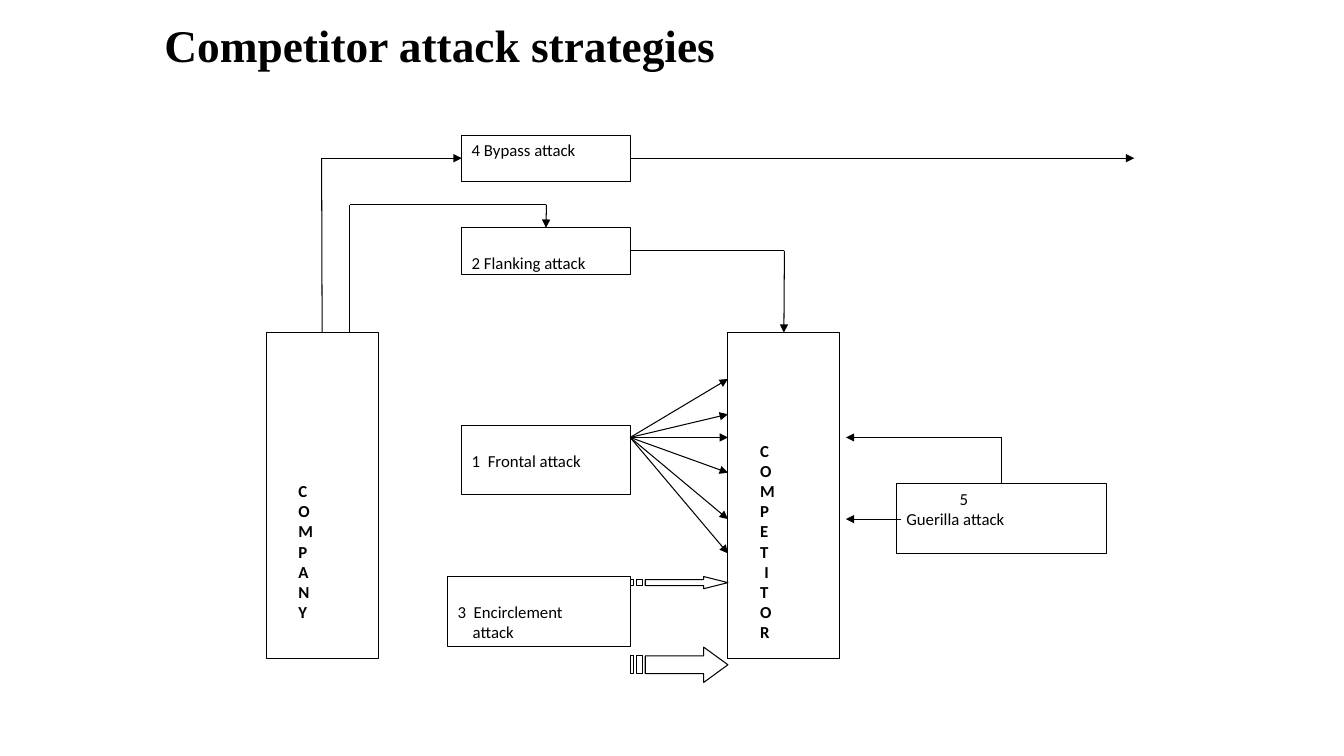
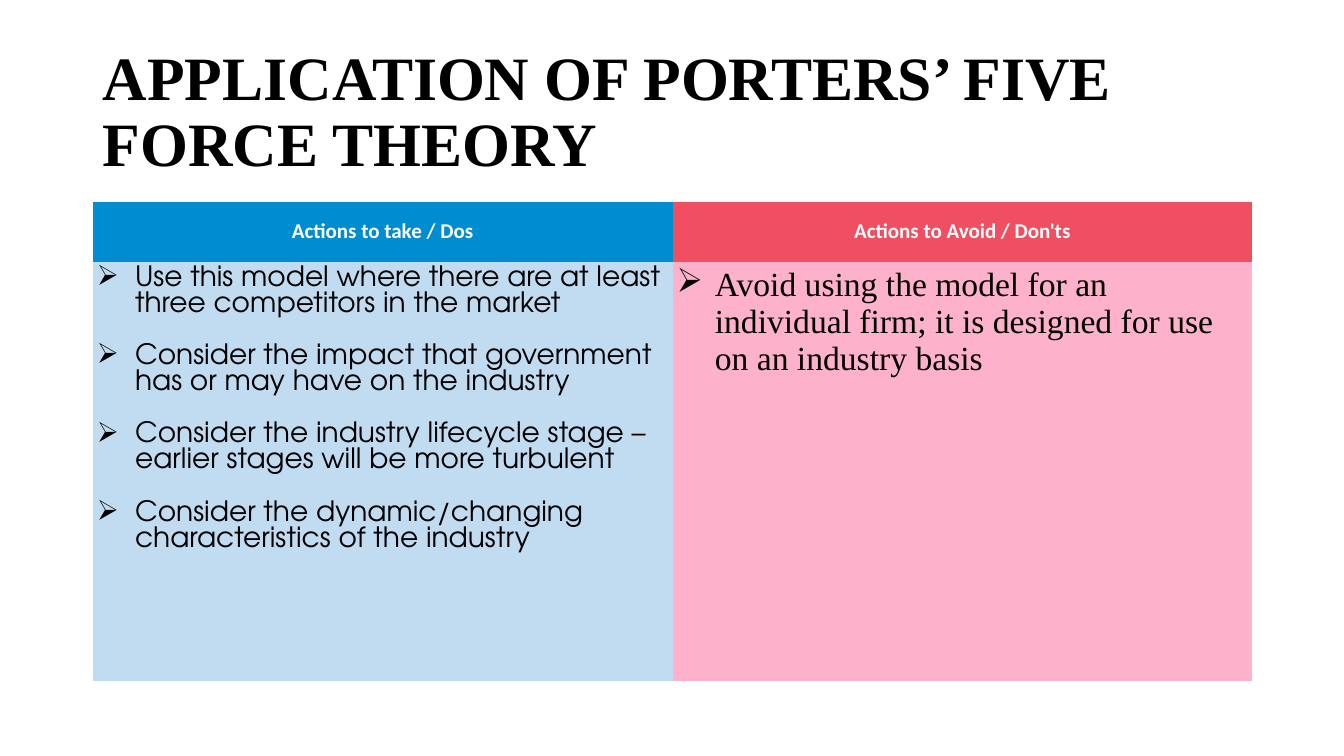
from dataclasses import dataclass

from lxml import etree
from pptx import Presentation
from pptx.dml.color import RGBColor
from pptx.enum.shapes import MSO_CONNECTOR, MSO_SHAPE
from pptx.enum.text import MSO_ANCHOR, MSO_AUTO_SIZE, PP_ALIGN
from pptx.oxml.ns import qn
from pptx.util import Inches, Pt

STRAIGHT = MSO_CONNECTOR.STRAIGHT
RECTANGLE = MSO_SHAPE.RECTANGLE
TOP, MIDDLE = MSO_ANCHOR.TOP, MSO_ANCHOR.MIDDLE
NO_AUTOFIT = MSO_AUTO_SIZE.NONE
LEFT, CENTER = PP_ALIGN.LEFT, PP_ALIGN.CENTER
SIDE_TOP, SIDE_LEFT, SIDE_RIGHT = 0, 1, 3
TITLE_ONLY = 5
PLAIN_TABLE = "{2D5ABB26-0587-4C30-8999-92F81FD0307C}"


@dataclass(frozen=True)
class Theme:
    ink: RGBColor = RGBColor(0, 0, 0)
    paper: RGBColor = RGBColor(255, 255, 255)
    do_head: RGBColor = RGBColor(0x00, 0x8D, 0xD0)
    do_body: RGBColor = RGBColor(0xC1, 0xDB, 0xF1)
    dont_head: RGBColor = RGBColor(0xF0, 0x4E, 0x61)
    dont_body: RGBColor = RGBColor(0xFD, 0xB1, 0xCB)
    serif: str = "Times New Roman"
    sans: str = "Calibri"
    geometric: str = "TeX Gyre Adventor"
    title_small: float = 32.4
    title_large: float = 44
    label: float = 12
    head: float = 15
    do_text: float = 20
    dont_text: float = 24
    hairline: float = 0.75


class Deck:
    """Holds the theme and the current slide."""

    def __init__(self, theme):
        self.theme = theme
        self.prs = Presentation()
        self.prs.slide_width, self.prs.slide_height = Inches(13.33), Inches(7.5)
        self.slide = None

    def new_slide(self):
        self.slide = self.prs.slides.add_slide(self.prs.slide_layouts[TITLE_ONLY])

    @staticmethod
    def apply(target, values):
        for name, value in values.items():
            setattr(target, name, value)

    def set_text(self, paragraph, text, font, size, color, bold=False,
                 align=LEFT, margin=0, hanging=0):
        properties = paragraph._p.get_or_add_pPr()
        properties.set("marL", str(Inches(margin)))
        properties.set("indent", str(-Inches(hanging)))
        paragraph.alignment = align
        paragraph.text = text
        for run in paragraph.runs:
            self.apply(run.font, {"name": font, "size": Pt(size), "bold": bold})
            run.font.color.rgb = color

    def title(self, text, left, top, width, height, size):
        title = self.slide.shapes.title
        self.apply(title, {"left": Inches(left), "top": Inches(top),
                           "width": Inches(width), "height": Inches(height)})
        self.apply(title.text_frame, {"vertical_anchor": MIDDLE, "word_wrap": True,
                                      "auto_size": NO_AUTOFIT})
        paragraph = title.text_frame.paragraphs[0]
        self.set_text(paragraph, text, self.theme.serif, size, self.theme.ink, bold=True)
        paragraph.line_spacing = 0.9

    def outline(self, shape):
        shape.shadow.inherit = False
        shape.fill.solid()
        shape.fill.fore_color.rgb = self.theme.paper
        shape.line.color.rgb = self.theme.ink
        shape.line.width = Pt(self.theme.hairline)

    def box(self, left, top, width, height, lines, inset_left=0.1, inset_top=0.05,
            bold=False):
        """Draw a box; each line is (text, margin, hanging)."""
        box = self.slide.shapes.add_shape(
            RECTANGLE, Inches(left), Inches(top), Inches(width), Inches(height))
        self.outline(box)
        frame = box.text_frame
        self.apply(frame, {"vertical_anchor": TOP, "word_wrap": True,
                           "margin_left": Inches(inset_left),
                           "margin_top": Inches(inset_top), "margin_bottom": 0})
        for index, (text, margin, hanging) in enumerate(lines):
            paragraph = frame.add_paragraph() if index else frame.paragraphs[0]
            self.set_text(paragraph, text, self.theme.sans, self.theme.label,
                          self.theme.ink, bold, margin=margin, hanging=hanging)
        return box

    def pillar(self, left, word, inset_top):
        """Draw a tall box with one letter to a line."""
        letters = [(letter, 0.04 if letter == "I" else 0, 0) for letter in word]
        return self.box(left, 3.3, 1.11, 3.23, letters, 0.32, inset_top, bold=True)

    def route(self, points, start=None, end=None, arrow=True):
        """Draw straight lines through points, joined to (box, side) at the ends."""
        last = len(points) - 2
        for index, (here, there) in enumerate(zip(points, points[1:])):
            line = self.slide.shapes.add_connector(
                STRAIGHT, *(Inches(value) for value in here + there))
            line.line.color.rgb = self.theme.ink
            line.line.width = Pt(self.theme.hairline)
            if start and index == 0:
                line.begin_connect(*start)
            if end and index == last:
                line.end_connect(*end)
            properties = line._element.spPr
            if arrow and index == last:
                etree.SubElement(properties.find(qn("a:ln")), qn("a:tailEnd"),
                                 type="triangle")
            etree.SubElement(properties, qn("a:effectLst"))

    def striped_arrow(self, left, top, height):
        upper, lower = top + height / 4, top + height * 3 / 4
        neck, tip = left + 0.73, left + 0.97
        head = [(neck, top), (neck, upper), (left + 0.15, upper), (left + 0.15, lower),
                (neck, lower), (neck, top + height), (tip, top + height / 2)]
        stripes = [[(left + a, upper), (left + a, lower), (left + b, lower),
                    (left + b, upper)] for a, b in ((0.06, 0.12), (0, 0.03))]
        builder = None
        for contour in [head] + stripes:
            points = [(Inches(x), Inches(y)) for x, y in contour]
            if builder is None:
                builder = self.slide.shapes.build_freeform(*points[0])
            else:
                builder.move_to(*points[0])
            builder.add_line_segments(points[1:], close=True)
        self.outline(builder.convert_to_shape())

    def table(self, left, top, column_width, row_heights, columns):
        """Draw a table; each column has a head, two fills, items and their style."""
        table = self.slide.shapes.add_table(
            len(row_heights), len(columns), Inches(left), Inches(top),
            Inches(column_width * len(columns)), Inches(sum(row_heights))).table
        table._tbl.tblPr.find(qn("a:tableStyleId")).text = PLAIN_TABLE
        for row, height in zip(table.rows, row_heights):
            row.height = Inches(height)
        for index, column in enumerate(columns):
            table.columns[index].width = Inches(column_width)
            head, body = table.cell(0, index), table.cell(1, index)
            for cell, fill, anchor in ((head, column["head_fill"], MIDDLE),
                                       (body, column["body_fill"], TOP)):
                cell.fill.solid()
                cell.fill.fore_color.rgb = fill
                self.apply(cell, {"vertical_anchor": anchor, **{
                    f"margin_{side}": Inches(0.04)
                    for side in ("left", "right", "top", "bottom")}})
            self.set_text(head.text_frame.paragraphs[0], column["head"], self.theme.sans,
                          self.theme.head, self.theme.paper, bold=True, align=CENTER)
            self.bullets(body.text_frame, column["items"], column["font"], column["size"])

    def bullets(self, frame, items, font, size):
        for index, item in enumerate(items):
            paragraph = frame.add_paragraph() if index else frame.paragraphs[0]
            etree.SubElement(paragraph._p.get_or_add_pPr(), qn("a:buChar"), char="➢")
            self.set_text(paragraph, item, font, size, self.theme.ink,
                          margin=0.38, hanging=0.38)
            if index:
                paragraph.space_before = Pt(18.6)


def attack_strategies(deck):
    deck.new_slide()
    deck.title("Competitor attack strategies", 1.53, 0.31, 10, 0.33,
               deck.theme.title_small)

    # The two parties and the five attacks
    company = deck.pillar(2.64, "COMPANY", 1.47)
    deck.box(4.58, 4.22, 1.67, 0.69, [("1\tFrontal attack", 0.16, 0.16)], inset_top=0.25)
    deck.box(4.44, 5.72, 1.81, 0.69, [("3\tEncirclement", 0.16, 0.16),
                                      ("attack", 0.15, 0)], inset_top=0.25)
    competitor = deck.pillar(7.22, "COMPETITOR", 1.07)
    guerilla = deck.box(8.89, 4.8, 2.08, 0.69,
                        [("5", 0.53, 0), ("Guerilla attack", 0, 0)])
    bypass = deck.box(4.58, 1.34, 1.67, 0.46, [("4 Bypass attack", 0, 0)])
    flanking = deck.box(4.58, 2.26, 1.67, 0.46, [("2 Flanking attack", 0, 0)],
                        inset_top=0.25)

    # Bypass and flanking routes
    deck.route([(3.19, 3.3), (3.19, 1.57), (4.58, 1.57)],
               (company, SIDE_TOP), (bypass, SIDE_LEFT))
    deck.route([(6.25, 1.57), (11.25, 1.57)], (bypass, SIDE_RIGHT))
    deck.route([(3.47, 3.3), (3.47, 2.03), (5.42, 2.03), (5.42, 2.26)],
               end=(flanking, SIDE_TOP))
    deck.route([(6.25, 2.49), (7.78, 2.49), (7.78, 3.3)],
               (flanking, SIDE_RIGHT), (competitor, SIDE_TOP))

    # Frontal fan and encirclement arrows
    for target in (3.76, 4.11, 4.34, 4.69, 5.15, 5.49):
        deck.route([(6.25, 4.34), (7.22, target)])
    for top, height in ((5.72, 0.12), (6.42, 0.35)):
        deck.striped_arrow(6.25, top, height)

    # Guerilla routes
    deck.route([(9.93, 4.8), (9.93, 4.34), (8.39, 4.34)], (guerilla, SIDE_TOP))
    deck.route([(8.94, 5.15), (8.39, 5.15)])


def five_forces(deck):
    theme = deck.theme
    deck.new_slide()
    deck.title("APPLICATION OF PORTERS’ FIVE FORCE THEORY", 0.92, 0.4, 11.5, 1.45,
               theme.title_large)
    dos = {
        "head": "Actions to take / Dos",
        "head_fill": theme.do_head, "body_fill": theme.do_body,
        "font": theme.geometric, "size": theme.do_text,
        "items": [
            "Use this model where there are at least three competitors in the market",
            "Consider the impact that government has or may have on the industry",
            "Consider the industry lifecycle stage – earlier stages will be more turbulent",
            "Consider the dynamic/changing characteristics of the industry",
        ],
    }
    donts = {
        "head": "Actions to Avoid / Don'ts",
        "head_fill": theme.dont_head, "body_fill": theme.dont_body,
        "font": theme.serif, "size": theme.dont_text,
        "items": ["Avoid using the model for an individual firm; "
                  "it is designed for use on an industry basis"],
    }
    deck.table(0.92, 2, 5.75, (0.6, 4.16), (dos, donts))


def main():
    deck = Deck(Theme())
    attack_strategies(deck)
    five_forces(deck)
    deck.prs.save("out.pptx")


if __name__ == "__main__":
    main()
